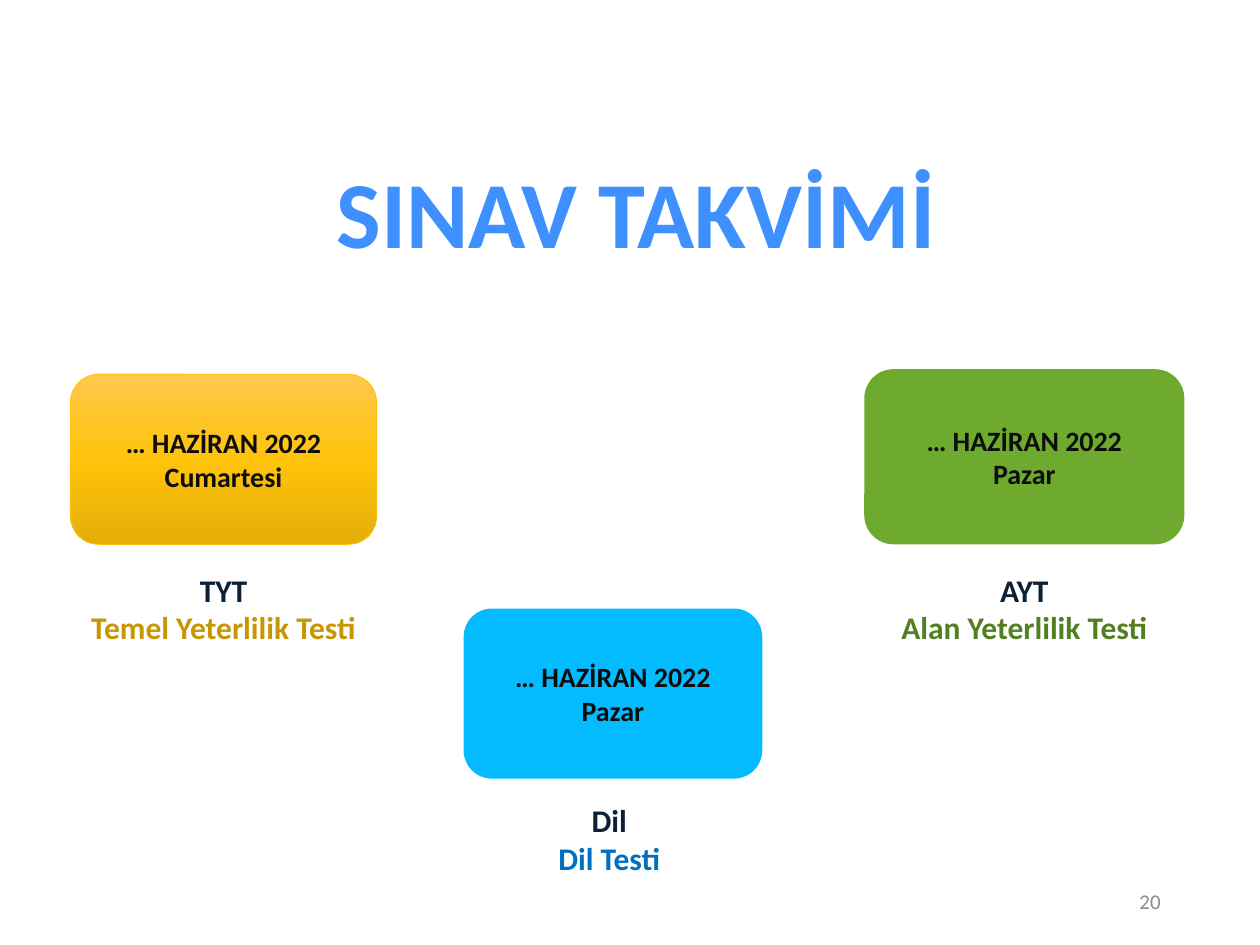
from copy import deepcopy

from pptx import Presentation
from pptx.dml.color import RGBColor
from pptx.enum.shapes import MSO_SHAPE
from pptx.enum.text import MSO_ANCHOR, PP_ALIGN
from pptx.oxml.ns import qn
from pptx.util import Inches, Pt

BLUE = RGBColor(0x05, 0xBB, 0xFF)
GREEN = RGBColor(0x6D, 0xAA, 0x2D)
GOLD = RGBColor(0xFF, 0xC3, 0x0B)
GOLD_LIGHT = RGBColor(0xFF, 0xC8, 0x4C)
GOLD_DARK = RGBColor(0xE5, 0xAE, 0x07)
BLUE_TEXT = RGBColor(0x00, 0x70, 0xC0)
GREEN_TEXT = RGBColor(0x52, 0x7F, 0x22)
GOLD_TEXT = RGBColor(0xC8, 0x96, 0x00)
TITLE_BLUE = RGBColor(0x3F, 0x90, 0xFF)
NAVY = RGBColor(0x0C, 0x20, 0x36)
BLACK = RGBColor(0x0D, 0x0D, 0x0D)
GRAY = RGBColor(0x8C, 0x8C, 0x8C)


def write(sp, lines, size, bold=True, align=PP_ALIGN.CENTER, anchor=MSO_ANCHOR.TOP):
    """Fill a shape with one paragraph per (text, colour) pair."""
    tf = sp.text_frame
    tf.word_wrap = True
    tf.vertical_anchor = anchor
    for i, (text, color) in enumerate(lines):
        p = tf.paragraphs[0] if i == 0 else tf.add_paragraph()
        p.text = text
        p.alignment = align
        p.font.name = "Calibri"
        p.font.size = Pt(size)
        p.font.bold = bold
        p.font.color.rgb = color


def fill_gold(sp):
    """Apply the three-stop gold gradient, light at the top."""
    sp.fill.gradient()
    sp.fill.gradient_angle = 270
    stops = sp._element.spPr.find(qn("a:gradFill")).find(qn("a:gsLst"))
    stops.append(deepcopy(stops[0]))
    colors = (GOLD_LIGHT, GOLD, GOLD_DARK)
    for stop, position, color in zip(sp.fill.gradient_stops, (0, 0.5, 1), colors):
        stop.position = position
        stop.color.rgb = color
    sp.line.color.rgb = GOLD
    sp.line.width = Pt(0.5)


prs = Presentation()
prs.slide_width, prs.slide_height = Inches(10), Inches(7.5)
s = prs.slides.add_slide(prs.slide_layouts[6])

title = s.shapes.add_textbox(Inches(0.56), Inches(1.17), Inches(8.98), Inches(1.01))
write(title, [("SINAV TAKVİMİ", TITLE_BLUE)], 54)

# left, card top, card width, card height, fill, day,
# label top, label width, label height, exam, full name, name colour
exams = [
    (0.56, 2.97, 2.43, 1.35, GOLD, "Cumartesi",
     4.48, 2.43, 1.01, "TYT", "Temel Yeterlilik Testi", GOLD_TEXT),
    (3.68, 4.83, 2.37, 1.35, BLUE, "Pazar",
     6.31, 2.31, 0.71, "Dil", "Dil Testi", BLUE_TEXT),
    (6.86, 2.93, 2.54, 1.39, GREEN, "Pazar",
     4.48, 2.54, 0.71, "AYT", "Alan Yeterlilik Testi", GREEN_TEXT),
]
for (left, top, width, height, color, day,
     label_top, label_width, label_height, exam, name, name_color) in exams:
    card = s.shapes.add_shape(MSO_SHAPE.ROUNDED_RECTANGLE, Inches(left), Inches(top),
                              Inches(width), Inches(height))
    card.shadow.inherit = False
    if color == GOLD:
        fill_gold(card)
    else:
        card.fill.solid()
        card.fill.fore_color.rgb = color
        card.line.fill.background()
    write(card, [("… HAZİRAN 2022", BLACK), (day, BLACK)], 16, anchor=MSO_ANCHOR.MIDDLE)

    label = s.shapes.add_textbox(Inches(left), Inches(label_top),
                                 Inches(label_width), Inches(label_height))
    write(label, [(exam, NAVY), (name, name_color)], 18)

number = s.shapes.add_textbox(Inches(7.06), Inches(6.95), Inches(2.25), Inches(0.4))
write(number, [("20", GRAY)], 12, bold=False, align=PP_ALIGN.RIGHT,
      anchor=MSO_ANCHOR.MIDDLE)

prs.save("out.pptx")
